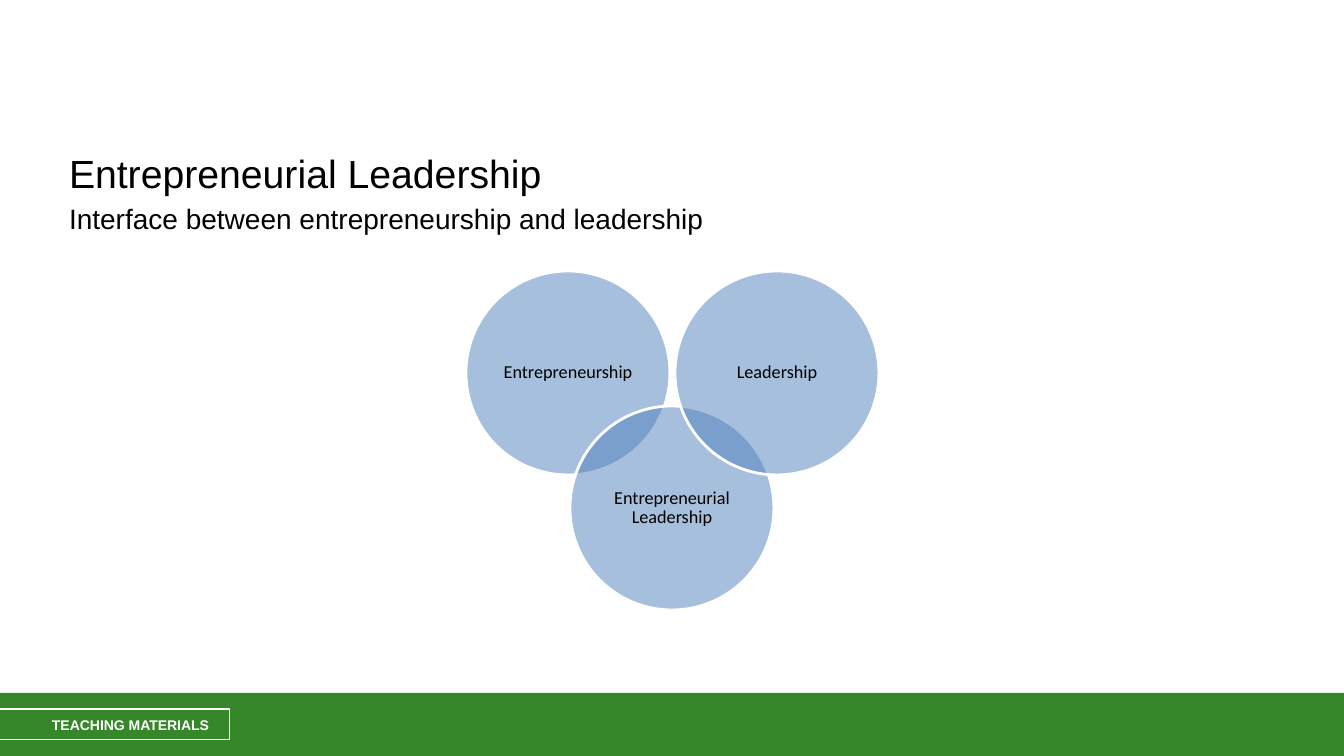
from dataclasses import dataclass

import pptx
import pptx.dml.color
import pptx.enum.shapes
import pptx.enum.text
import pptx.oxml
import pptx.oxml.ns
import pptx.util

SLIDE_WIDTH, SLIDE_HEIGHT = 1344, 756
EMU_PER_PX = 914400 / 100.8
COLOURS = {"green": "368729", "white": "FFFFFF", "black": "000000", "blue": "4F81BD"}
DIAMETER = 204
ALIGN = pptx.enum.text.PP_ALIGN
ANCHOR = pptx.enum.text.MSO_ANCHOR
SHAPE = pptx.enum.shapes.MSO_SHAPE


@dataclass
class Circle:
    label: str
    left: int
    top: int


@dataclass
class Line:
    text: str
    size: int
    space_before: int


CIRCLES = [
    Circle("Entrepreneurship", 466, 271),
    Circle("Entrepreneurial Leadership", 570, 406),
    Circle("Leadership", 675, 271),
]
HEADINGS = [
    Line("Entrepreneurial Leadership", 28, 0),
    Line("Interface between entrepreneurship and leadership", 20, 4),
]


def px(length: int) -> int:
    return round(length * EMU_PER_PX)


def colour(name: str) -> pptx.dml.color.RGBColor:
    return pptx.dml.color.RGBColor.from_string(COLOURS[name])


def add_shape(slide, kind, left: int, top: int, width: int, height: int,
              fill: str = "", line: str = "", line_width: float = 0):
    """Add a shape without shadow; an empty colour name means no fill or line."""
    shape = slide.shapes.add_shape(kind, px(left), px(top), px(width), px(height))
    shape.shadow.inherit = False
    if fill:
        shape.fill.solid()
        shape.fill.fore_color.rgb = colour(fill)
    else:
        shape.fill.background()
    if line:
        shape.line.color.rgb = colour(line)
        shape.line.width = pptx.util.Pt(line_width)
    else:
        shape.line.fill.background()
    return shape


def set_frame(frame, left: int, top: int, right: int, bottom: int, anchor) -> None:
    """Set wrapping, insets and vertical anchor."""
    frame.word_wrap = True
    frame.margin_left, frame.margin_top = px(left), px(top)
    frame.margin_right, frame.margin_bottom = px(right), px(bottom)
    frame.vertical_anchor = anchor


def add_text(paragraph, text: str, size: int, font: str, name: str,
             align=ALIGN.LEFT, bold: bool = False) -> None:
    paragraph.alignment = align
    run = paragraph.add_run()
    run.text = text
    run.font.size = pptx.util.Pt(size)
    run.font.name = font
    run.font.bold = bold
    run.font.color.rgb = colour(name)


def add_footer(slide) -> None:
    add_shape(slide, SHAPE.RECTANGLE, 0, 693, SLIDE_WIDTH, 63, fill="green")
    label = add_shape(slide, SHAPE.RECTANGLE, -28, 709, 258, 31,
                      line="white", line_width=0.75)
    set_frame(label.text_frame, 80, 5, 10, 5, ANCHOR.MIDDLE)
    add_text(label.text_frame.paragraphs[0], "TEACHING MATERIALS", 10, "Arial",
             "white", bold=True)


def add_headings(slide) -> None:
    box = slide.shapes.add_textbox(px(59), px(144), px(1191), px(96))
    frame = box.text_frame
    set_frame(frame, 10, 5, 10, 5, ANCHOR.TOP)
    for index, line in enumerate(HEADINGS):
        paragraph = frame.add_paragraph() if index else frame.paragraphs[0]
        paragraph.space_before = pptx.util.Pt(line.space_before)
        add_text(paragraph, line.text, line.size, "Arial", "black")


def add_circle(slide, circle: Circle) -> None:
    """Add a half-transparent circle with its label inside."""
    shape = add_shape(slide, SHAPE.OVAL, circle.left, circle.top, DIAMETER, DIAMETER,
                      fill="blue", line="white", line_width=2)
    fill = shape.fill.fore_color._xFill.find(pptx.oxml.ns.qn("a:srgbClr")) \
        if hasattr(shape.fill.fore_color, "_xFill") else \
        shape._element.spPr.find(pptx.oxml.ns.qn("a:solidFill"))[0]
    alpha = pptx.oxml.parse_xml(
        f'<a:alpha {pptx.oxml.ns.nsdecls("a")} val="50000"/>')
    fill.append(alpha)
    set_frame(shape.text_frame, 5, 5, 5, 5, ANCHOR.MIDDLE)
    paragraph = shape.text_frame.paragraphs[0]
    paragraph.line_spacing = 0.9
    add_text(paragraph, circle.label, 13, "Calibri", "black", ALIGN.CENTER)


def main() -> None:
    presentation = pptx.Presentation()
    presentation.slide_width = px(SLIDE_WIDTH)
    presentation.slide_height = px(SLIDE_HEIGHT)
    slide = presentation.slides.add_slide(presentation.slide_layouts[6])
    add_footer(slide)
    add_headings(slide)
    for circle in CIRCLES:
        add_circle(slide, circle)
    presentation.save("out.pptx")


if __name__ == "__main__":
    main()
